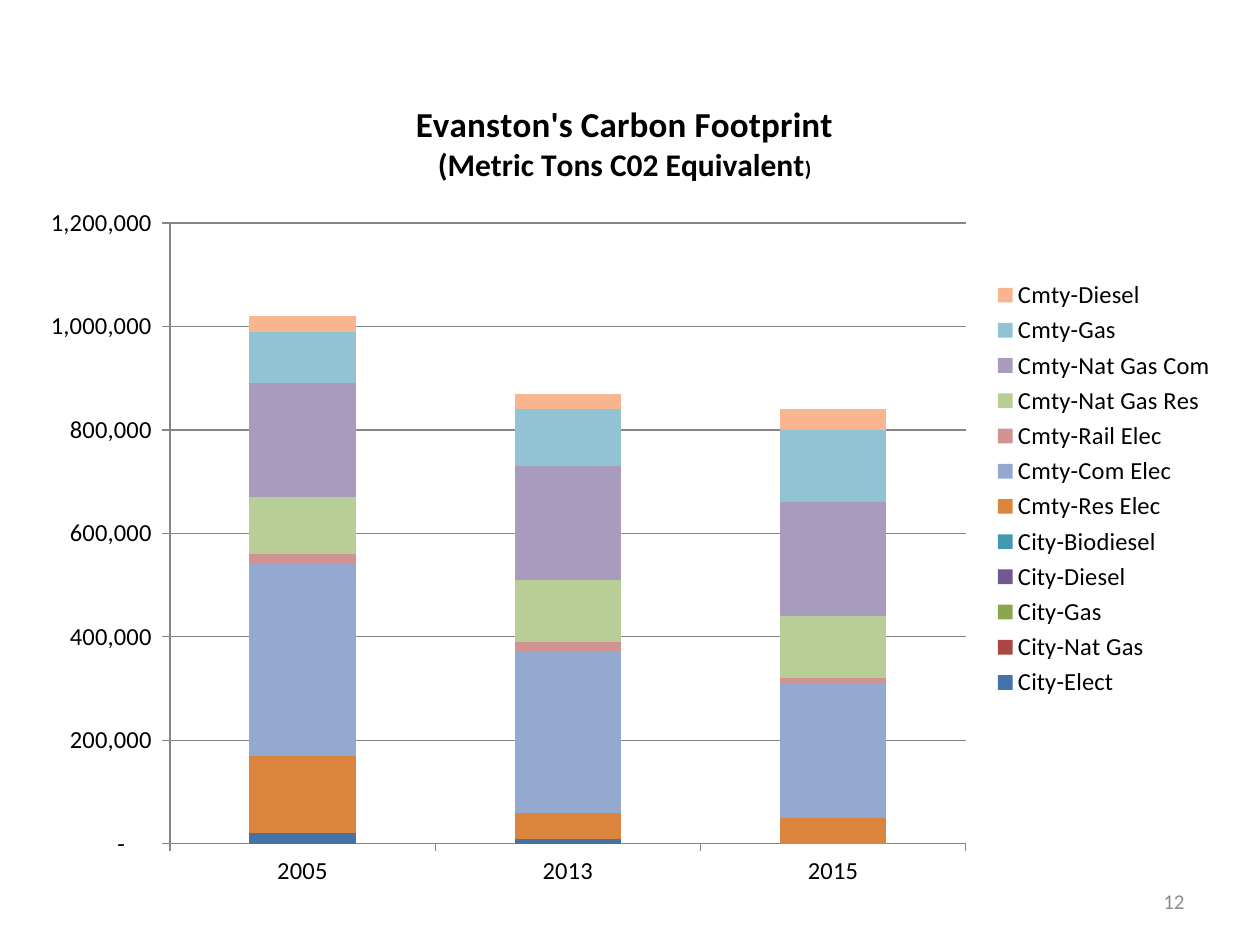
import pptx
import pptx.chart.data
import pptx.dml.color
import pptx.enum.chart
import pptx.enum.text
import pptx.oxml
import pptx.oxml.ns
import pptx.util

YEARS = ("2005", "2013", "2015")
EMISSIONS = (
    ("City-Elect", "4572A7", (20000, 10000, 0)),
    ("City-Nat Gas", "AA4643", (0, 0, 0)),
    ("City-Gas", "89A54E", (0, 0, 0)),
    ("City-Diesel", "71588F", (0, 0, 0)),
    ("City-Biodiesel", "4198AF", (0, 0, 0)),
    ("Cmty-Res Elec", "DB843D", (150000, 50000, 50000)),
    ("Cmty-Com Elec", "93A9CF", (370000, 310000, 260000)),
    ("Cmty-Rail Elec", "D19392", (20000, 20000, 10000)),
    ("Cmty-Nat Gas Res", "B9CD96", (110000, 120000, 120000)),
    ("Cmty-Nat Gas Com", "A99BBD", (220000, 220000, 220000)),
    ("Cmty-Gas", "91C3D5", (100000, 110000, 140000)),
    ("Cmty-Diesel", "F9B590", (30000, 30000, 40000)),
)
TITLE = (
    (("Evanston's Carbon Footprint", "title"),),
    (("(Metric Tons C02 Equivalent", "subtitle"), (")", "bracket")),
)
PAGE_NUMBER = "12"
NUMBER_FORMAT = '_(* #,##0_);_(* \\(#,##0\\);_(* "-"??_);_('
THEME = {
    "font": "Calibri",
    "color": {"text": "000000", "line": "868686", "number": "8C8C8C"},
    "size": {"title": 20, "subtitle": 18, "bracket": 12, "label": 14, "number": 12},
}
PAGE = (1260, 945)
CHART = (21, 73, 1207, 829)
PLOT = (170, 223, 796, 621)
LEGEND = (992, 275, 224, 428)
TITLE_CORNER = (412, 97)
NUMBER_BOX = (903, 876, 294, 50)


def px(length):
    return pptx.util.Emu(length * 914400 // 126)


def rgb(name):
    return pptx.dml.color.RGBColor.from_string(THEME["color"].get(name, name))


def style(font, size, color="text", bold=False):
    font.name = THEME["font"]
    font.size = pptx.util.Pt(THEME["size"][size])
    font.bold = bold
    font.color.rgb = rgb(color)


def draw_line(line):
    line.color.rgb = rgb("line")
    line.width = pptx.util.Pt(0.75)


def set_layout(element, index, area, inner=False):
    for old in element.findall(pptx.oxml.ns.qn("c:layout")):
        element.remove(old)
    left, top, width, height = CHART
    shares = [(area[0] - left) / width, (area[1] - top) / height]
    shares += [length / whole for length, whole in zip(area[2:], (width, height))]
    settings = [("layoutTarget", "inner")] if inner else []
    settings += [("xMode", "edge"), ("yMode", "edge")]
    settings += [(key, round(share, 4)) for key, share in zip("xywh", shares)]
    parts = "".join(f'<c:{key} val="{value}"/>' for key, value in settings)
    namespace = pptx.oxml.ns.nsdecls("c")
    element.insert(index, pptx.oxml.parse_xml(
        f"<c:layout {namespace}><c:manualLayout>{parts}</c:manualLayout></c:layout>"))


def add_title(chart):
    chart.has_title = True
    frame = chart.chart_title.text_frame
    for number, spans in enumerate(TITLE):
        para = frame.add_paragraph() if number else frame.paragraphs[0]
        for text, size in spans:
            span = para.add_run()
            span.text = text
            style(span.font, size, bold=True)
    chart.chart_title.include_in_layout = False
    set_layout(chart.chart_title._element, 1, TITLE_CORNER)


def add_axes(chart):
    for axis in (chart.category_axis, chart.value_axis):
        style(axis.tick_labels.font, "label")
        axis.major_tick_mark = pptx.enum.chart.XL_TICK_MARK.OUTSIDE
        axis.minor_tick_mark = pptx.enum.chart.XL_TICK_MARK.NONE
        draw_line(axis.format.line)
    values = chart.value_axis
    values.minimum_scale, values.maximum_scale, values.major_unit = 0, 1200000, 200000
    values.has_major_gridlines = True
    draw_line(values.major_gridlines.format.line)
    values.tick_labels.number_format = NUMBER_FORMAT
    values.tick_labels.number_format_is_linked = False


def add_footprint_chart(page):
    data = pptx.chart.data.CategoryChartData()
    data.categories = YEARS
    for name, color, values in EMISSIONS:
        data.add_series(name, values)
    chart = page.shapes.add_chart(
        pptx.enum.chart.XL_CHART_TYPE.COLUMN_STACKED, *map(px, CHART), data).chart
    style(chart.font, "label")
    add_title(chart)
    add_axes(chart)
    plot = chart.plots[0]
    plot.gap_width, plot.overlap, plot.vary_by_categories = 150, 100, False
    for series, (name, color, values) in zip(plot.series, EMISSIONS):
        series.format.fill.solid()
        series.format.fill.fore_color.rgb = rgb(color)
    chart.has_legend = True
    chart.legend.position = pptx.enum.chart.XL_LEGEND_POSITION.RIGHT
    chart.legend.include_in_layout = False
    style(chart.legend.font, "label")
    set_layout(chart.legend._element, 1, LEGEND)
    set_layout(chart._chartSpace.chart.plotArea, 0, PLOT, inner=True)


def add_page_number(page):
    box = page.shapes.add_textbox(*map(px, NUMBER_BOX))
    frame = box.text_frame
    frame.word_wrap = True
    frame.vertical_anchor = pptx.enum.text.MSO_ANCHOR.MIDDLE
    para = frame.paragraphs[0]
    para.alignment = pptx.enum.text.PP_ALIGN.RIGHT
    span = para.add_run()
    span.text = PAGE_NUMBER
    style(span.font, "number", "number")


def main():
    deck = pptx.Presentation()
    deck.slide_width, deck.slide_height = map(px, PAGE)
    page = deck.slides.add_slide(deck.slide_layouts[6])
    add_footprint_chart(page)
    add_page_number(page)
    deck.save("out.pptx")


if __name__ == "__main__":
    main()
